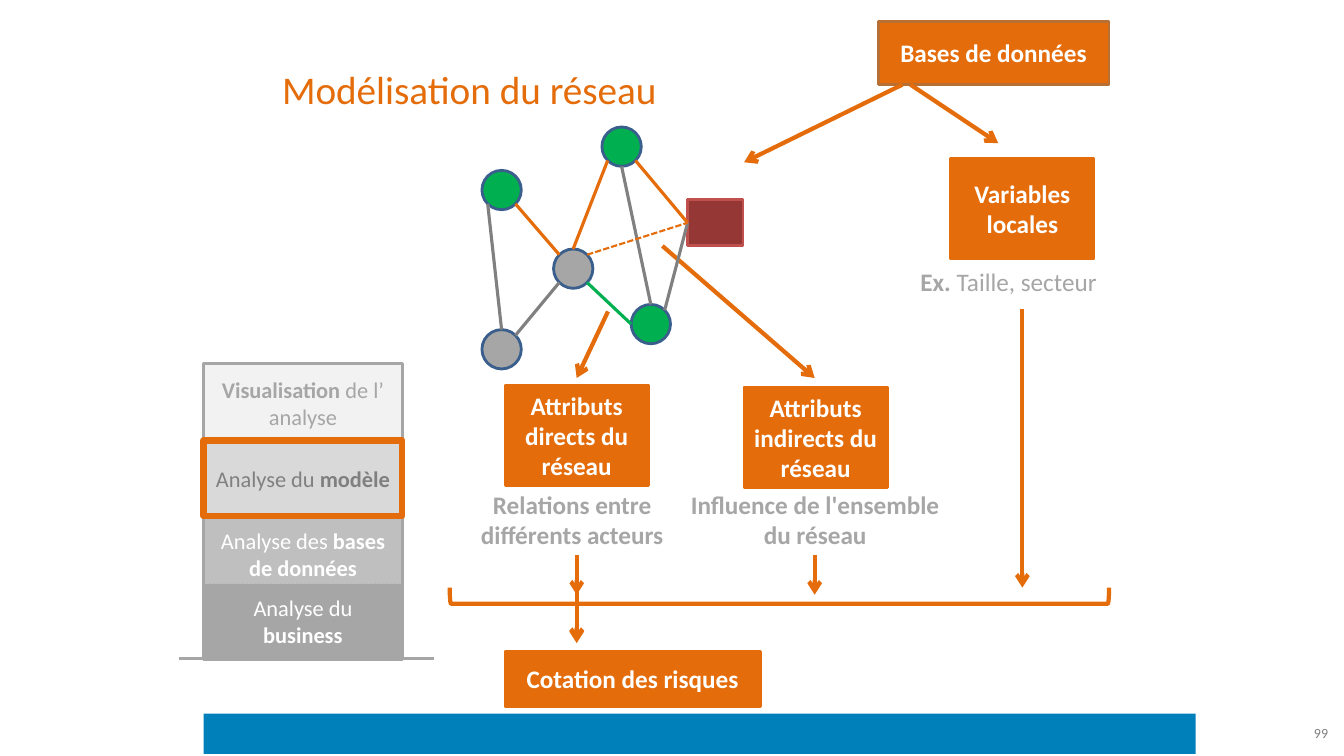
from math import cos, radians, sin

from lxml.etree import SubElement
from pptx import Presentation
from pptx.dml.color import RGBColor
from pptx.enum.dml import MSO_LINE
from pptx.enum.shapes import MSO_CONNECTOR, MSO_SHAPE
from pptx.enum.text import MSO_ANCHOR, PP_ALIGN
from pptx.oxml.ns import qn
from pptx.util import Inches, Pt


class Theme:
    font = "Calibri"
    title, label, layer, page = 28, 18, 16, 10
    orange, green, blue, white = "E46C0A", "00B050", "0080BB", "FFFFFF"
    ring, brown, red, rose, sand = "3A5F8C", "B76F34", "953735", "C0504D", "C4BD97"
    dark, mid, soft, light, pale = "808080", "A6A6A6", "BFBFBF", "D9D9D9", "F2F2F2"


# Text is a list of (words, bold) runs; places are left, top, width, height.
TITLE = [("Modélisation du réseau", False)]
PAGE = [("99", False)]

SIZE = 0.39
NODES = {
    "west": (4.78, 1.69, Theme.green),
    "north": (5.97, 1.26, Theme.green),
    "east": (6.26, 3.02, Theme.green),
    "south": (4.78, 3.27, Theme.mid),
    "hub": (5.49, 2.47, Theme.mid),
}
TARGET = (6.82, 1.98, 0.55, 0.46)

# Angles run clockwise from the right side of a node.
EDGES = [
    ("north", 90, "east", 270, Theme.dark),
    ("north", 135, "hub", 270, Theme.orange),
    ("hub", 45, "east", 180, Theme.green),
    ("hub", 135, "south", 315, Theme.dark),
    ("hub", 225, "west", 45, Theme.orange),
    ("west", 135, "south", 270, Theme.dark),
]
LINKS = [
    ("north", 45, Theme.orange, 2.25, None),
    ("east", 315, Theme.dark, 2.25, None),
    ("hub", 315, Theme.orange, 1.5, MSO_LINE.SQUARE_DOT),
]

BOXES = [
    ("Cotation des risques", (5.01, 6.46, 2.53, 0.55), Theme.orange),
    ("Variables locales", (9.43, 1.57, 1.42, 1), Theme.orange),
    ("Attributs indirects du réseau", (7.38, 3.84, 1.42, 1), Theme.orange),
    ("Attributs directs du réseau", (5.01, 3.82, 1.42, 1), Theme.orange),
    ("Bases de données", (8.71, 0.21, 2.29, 0.63), Theme.brown),
]
ARROWS = [
    ((5.72, 5.51), (5.72, 6.37)),
    ((10.14, 3.07), (10.14, 5.83)),
    ((6.03, 3.09), (5.72, 3.75)),
    ((6.57, 2.44), (8.08, 3.75)),
    ((5.72, 5.51), (5.72, 5.9)),
    ((8.08, 5.51), (8.08, 5.9)),
    ((5.72, 5.98), (5.72, 6.38)),
    ((8.95, 0.84), (7.38, 1.61)),
    ((9.03, 0.84), (9.9, 1.42)),
]
NOTES = [
    ([("Ex. ", True), ("Taille, secteur", False)],
     (9.03, 2.59, 1.97, 0.4), PP_ALIGN.LEFT, False),
    ([("Influence de l'ensemble du réseau", True)],
     (6.74, 4.8, 2.69, 0.71), PP_ALIGN.CENTER, True),
    ([("Relations entre différents acteurs", True)],
     (4.64, 4.8, 2.07, 0.71), PP_ALIGN.CENTER, True),
]

STACK = (2.02, 3.61, 1.97, 2.93)
LAYERS = [
    ([("Visualisation ", True), ("de l’ analyse", False)],
     3.62, Theme.pale, Theme.mid, Theme.sand),
    ([("Analyse du ", False), ("modèle", True)],
     4.37, Theme.light, Theme.dark, Theme.sand),
    ([("Analyse des ", False), ("bases de données", True)],
     5.12, Theme.soft, Theme.white, Theme.sand),
    ([("Analyse du ", False), ("business", True)],
     5.79, Theme.mid, Theme.white, Theme.soft),
]
DEPTH = 0.75

deck = Presentation()
deck.slide_width, deck.slide_height = Inches(13.33), Inches(7.5)
slide = deck.slides.add_slide(deck.slide_layouts[6])


def color(code):
    return RGBColor.from_string(code)


def write(shape, runs, size, ink, align=PP_ALIGN.CENTER):
    para = shape.text_frame.paragraphs[0]
    para.alignment = align
    font = para.font
    font.name, font.size = Theme.font, Pt(size)
    font.color.rgb = color(ink)
    if len(runs) == 1:
        font.bold = runs[0][1]
    for words, bold in runs:
        run = para.add_run()
        run.text = words
        if len(runs) > 1:
            run.font.bold = bold


def draw(kind, place, fill=None, edge=None, width=2.0, dash=None):
    shape = slide.shapes.add_shape(kind, *map(Inches, place))
    shape.shadow.inherit = False
    shape.text_frame.vertical_anchor = MSO_ANCHOR.MIDDLE
    if fill:
        shape.fill.solid()
        shape.fill.fore_color.rgb = color(fill)
    else:
        shape.fill.background()
    if edge:
        shape.line.color.rgb = color(edge)
        shape.line.width = Pt(width)
        if dash:
            shape.line.dash_style = dash
    else:
        shape.line.fill.background()
    return shape


def label(runs, place, size, ink, align, wrap):
    box = slide.shapes.add_textbox(*map(Inches, place))
    box.text_frame.word_wrap = wrap
    write(box, runs, size, ink, align)


def join(start, end, ink, width=2.25, dash=None, head=False):
    wire = slide.shapes.add_connector(
        MSO_CONNECTOR.STRAIGHT, *map(Inches, start + end))
    wire.line.color.rgb = color(ink)
    wire.line.width = Pt(width)
    if dash:
        wire.line.dash_style = dash
    if head:
        SubElement(wire.line._get_or_add_ln(), qn("a:tailEnd"), type="arrow")
    SubElement(wire._element.spPr, qn("a:effectLst"))
    return wire


def rim(name, angle):
    """Point on the outline of a node."""
    left, top, _ = NODES[name]
    half, turn = SIZE / 2, radians(angle)
    return left + half * (1 + cos(turn)), top + half * (1 + sin(turn))


# Network
draw(MSO_SHAPE.RECTANGLE, (2.02, 7.08, 9.84, 0.4), Theme.blue)
for left, top, fill in NODES.values():
    draw(MSO_SHAPE.OVAL, (left, top, SIZE, SIZE), fill, Theme.ring)
for first, leave, last, reach, ink in EDGES:
    join(rim(first, leave), rim(last, reach), ink)

# Flow from the data to the rating
bracket = draw(MSO_SHAPE.RIGHT_BRACKET, (7.65, 2.64, 0.16, 6.54),
               edge=Theme.orange, width=3)
bracket.rotation = 90
for words, place, edge in BOXES:
    box = draw(MSO_SHAPE.RECTANGLE, place, Theme.orange, edge)
    write(box, [(words, True)], Theme.label, Theme.white)
for start, end in ARROWS:
    join(start, end, Theme.orange, 3, head=True)
for runs, place, align, wrap in NOTES:
    label(runs, place, Theme.label, Theme.mid, align, wrap)

target = draw(MSO_SHAPE.RECTANGLE, TARGET, Theme.red, Theme.rose)
dock = (TARGET[0], TARGET[1] + TARGET[3] / 2)
for name, angle, ink, width, dash in LINKS:
    join(rim(name, angle), dock, ink, width, dash).end_connect(target, 1)

# Stack of layers
left, top, width, height = STACK
join((1.78, 6.53), (4.3, 6.53), Theme.mid)
for runs, y, fill, ink, edge in LAYERS:
    layer = draw(MSO_SHAPE.RECTANGLE, (left, y, width, DEPTH), fill, edge,
                 0.75, MSO_LINE.SQUARE_DOT)
    write(layer, runs, Theme.layer, ink)
draw(MSO_SHAPE.RECTANGLE, STACK, edge=Theme.mid)
draw(MSO_SHAPE.RECTANGLE, (left, LAYERS[1][1], width, DEPTH),
     edge=Theme.orange, width=4.5)

label(TITLE, (2.7, 0.6, 3.96, 0.57), Theme.title, Theme.orange,
      PP_ALIGN.LEFT, False)
label(PAGE, (12.18, 7.14, 1.09, 0.4), Theme.page, Theme.dark,
      PP_ALIGN.RIGHT, True)

deck.save("out.pptx")
